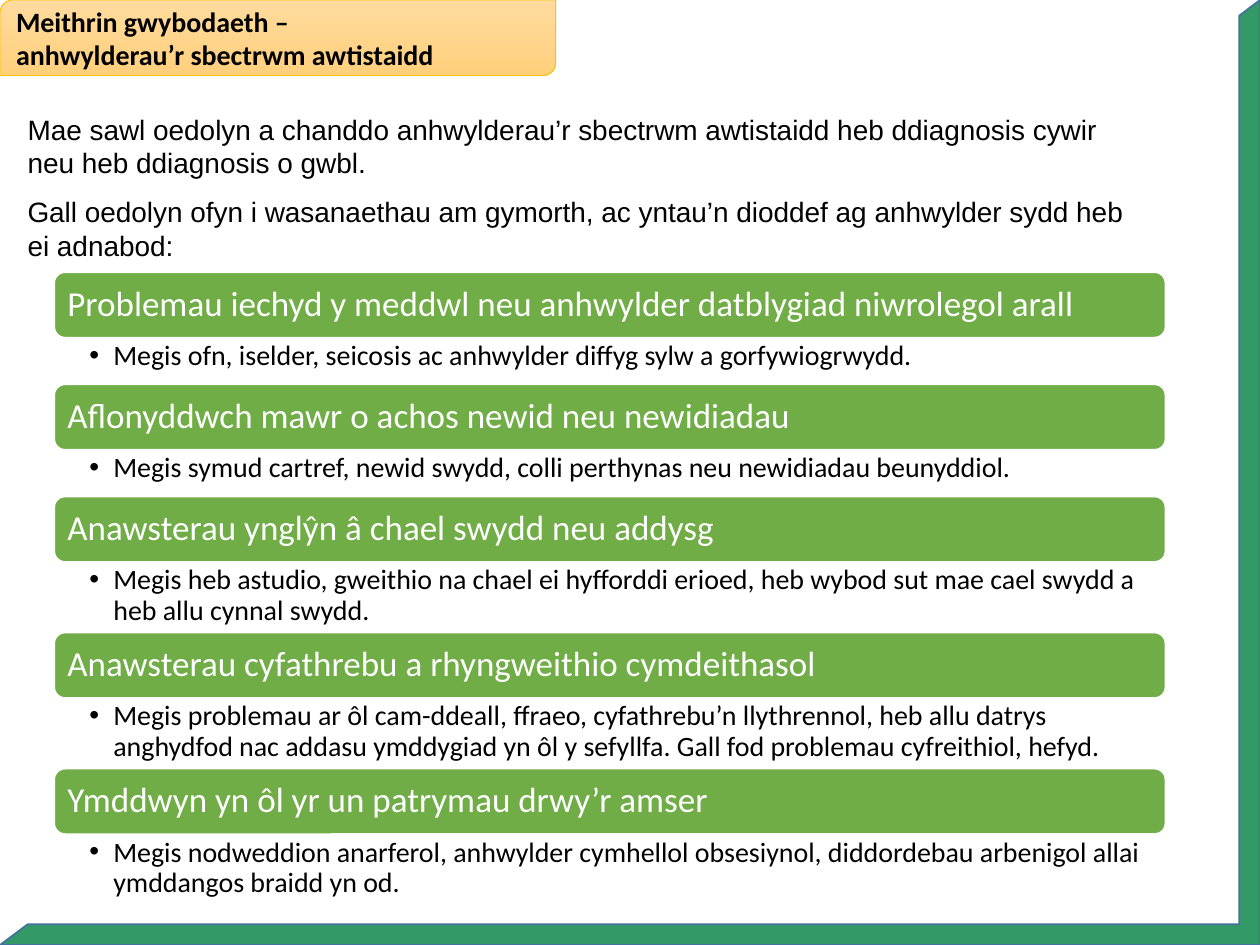
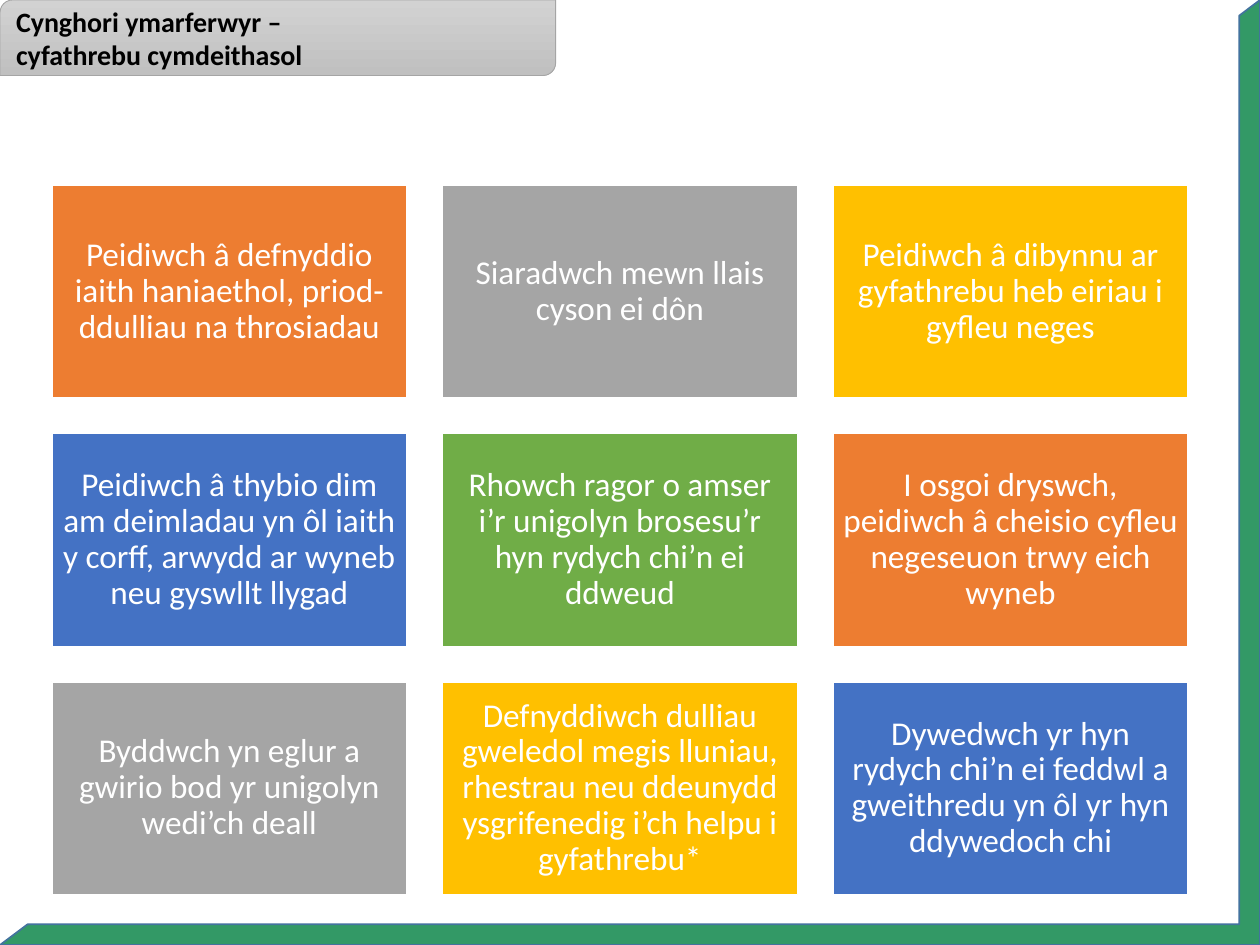
import itertools
from dataclasses import dataclass

import lxml.etree
import pptx
import pptx.dml.color
import pptx.enum.shapes
import pptx.enum.text
import pptx.oxml.ns
import pptx.util

HEADS = [
    ("Meithrin gwybodaeth –", "anhwylderau’r sbectrwm awtistaidd"),
    ("Cynghori ymarferwyr –", "cyfathrebu cymdeithasol"),
]
INTRO = [
    "Mae sawl oedolyn a chanddo anhwylderau’r sbectrwm awtistaidd heb ddiagnosis cywir neu heb ddiagnosis o gwbl.",
    "Gall oedolyn ofyn i wasanaethau am gymorth, ac yntau’n dioddef ag anhwylder sydd heb ei adnabod:",
]
SIGNS = [
    ("Problemau iechyd y meddwl neu anhwylder datblygiad niwrolegol arall",
     "Megis ofn, iselder, seicosis ac anhwylder diffyg sylw a gorfywiogrwydd.", 1),
    ("Aflonyddwch mawr o achos newid neu newidiadau",
     "Megis symud cartref, newid swydd, colli perthynas neu newidiadau beunyddiol.", 1),
    ("Anawsterau ynglŷn â chael swydd neu addysg",
     "Megis heb astudio, gweithio na chael ei hyfforddi erioed, heb wybod sut mae cael swydd a heb allu cynnal swydd.", 2),
    ("Anawsterau cyfathrebu a rhyngweithio cymdeithasol",
     "Megis problemau ar ôl cam-ddeall, ffraeo, cyfathrebu’n llythrennol, heb allu datrys anghydfod nac addasu ymddygiad yn ôl y sefyllfa. Gall fod problemau cyfreithiol, hefyd.", 2),
    ("Ymddwyn yn ôl yr un patrymau drwy’r amser",
     "Megis nodweddion anarferol, anhwylder cymhellol obsesiynol, diddordebau arbenigol allai ymddangos braidd yn od.", 2),
]
TIPS = [
    "Peidiwch â defnyddio iaith haniaethol, priod-ddulliau na throsiadau",
    "Siaradwch mewn llais cyson ei dôn",
    "Peidiwch â dibynnu ar gyfathrebu heb eiriau i gyfleu neges",
    "Peidiwch â thybio dim am deimladau yn ôl iaith y corff, arwydd ar wyneb neu gyswllt llygad",
    "Rhowch ragor o amser i’r unigolyn brosesu’r hyn rydych chi’n ei ddweud",
    "I osgoi dryswch, peidiwch â cheisio cyfleu negeseuon trwy eich wyneb",
    "Byddwch yn eglur a gwirio bod yr unigolyn wedi’ch deall",
    "Defnyddiwch dulliau gweledol megis lluniau, rhestrau neu ddeunydd ysgrifenedig i’ch helpu i gyfathrebu*",
    "Dywedwch yr hyn rydych chi’n ei feddwl a gweithredu yn ôl yr hyn ddywedoch chi",
]


@dataclass(frozen=True)
class Theme:
    font: str = "Calibri"
    plain: str = "Arial"
    ink: str = "000000"
    paper: str = "FFFFFF"
    frame: str = "339966"
    edge: str = "43739E"
    bar: str = "70AD47"
    cards: tuple = ("ED7D31", "A5A5A5", "FFC000", "4472C4", "70AD47")
    gold: tuple = ("FFDB9E", "FFD07C", "FFC000")
    grey: tuple = ("D2D2D2", "C0C0C0", "A5A5A5")
    body: int = 16
    title: int = 20
    card: int = 19


THEME = Theme()
WIDE, HIGH = 10, 7.5
INCH = pptx.util.Inches
KIND = pptx.enum.shapes.MSO_SHAPE
MID = pptx.enum.text.MSO_ANCHOR.MIDDLE
LEFT = pptx.enum.text.PP_ALIGN.LEFT
CENTRE = pptx.enum.text.PP_ALIGN.CENTER


def tint(code):
    return pptx.dml.color.RGBColor.from_string(code)


def draw(slide, kind, area, fill, line, width=1.0):
    shape = slide.shapes.add_shape(kind, *map(INCH, area))
    shape.shadow.inherit = False
    if isinstance(fill, str):
        shape.fill.solid()
        shape.fill.fore_color.rgb = tint(fill)
    else:
        shape.fill.gradient()
        shape.fill.gradient_angle = 270
        for stop, code in zip(shape.fill.gradient_stops, fill):
            stop.color.rgb = tint(code)
    shape.line.color.rgb = tint(line)
    shape.line.width = pptx.util.Pt(width)
    return shape


def add_dot(para):
    props = para._p.get_or_add_pPr()
    props.set("marL", str(INCH(0.19)))
    props.set("indent", str(-INCH(0.19)))
    ns = pptx.oxml.ns.qn
    lxml.etree.SubElement(props, ns("a:buFont")).set("typeface", "Arial")
    lxml.etree.SubElement(props, ns("a:buChar")).set("char", "•")


def write(shape, lines, size, ink, font=THEME.font, bold=False, align=LEFT,
          space=1.0, gap=0, pads=(0.1, 0.05, 0.1, 0.05), dot=False, mid=True):
    frame = shape.text_frame
    frame.word_wrap = True
    frame.vertical_anchor = MID if mid else pptx.enum.text.MSO_ANCHOR.TOP
    (frame.margin_left, frame.margin_top,
     frame.margin_right, frame.margin_bottom) = map(INCH, pads)
    for rank, line in enumerate(lines):
        para = frame.add_paragraph() if rank else frame.paragraphs[0]
        para.text = line
        if dot:
            add_dot(para)
        para.alignment = align
        para.line_spacing = space
        if rank and gap:
            para.space_before = pptx.util.Pt(gap)
        para.font.name = font
        para.font.size = pptx.util.Pt(size)
        para.font.bold = bold
        para.font.color.rgb = tint(ink)


def add_box(slide, area):
    return slide.shapes.add_textbox(*map(INCH, area))


def start(deck, head, tones):
    slide = deck.slides.add_slide(deck.slide_layouts[6])
    frame = draw(slide, KIND.HALF_FRAME, (0, 0, WIDE, HIGH), THEME.frame, THEME.edge)
    frame.rotation = 180
    frame.adjustments[0] = frame.adjustments[1] = 0.022
    tab = draw(slide, KIND.ROUND_2_DIAG_RECTANGLE, (0, 0, 4.41, 0.08 * HIGH),
               tones[:2], tones[2], 0.5)
    write(tab, head, THEME.body, THEME.ink, bold=True)
    return slide


def list_signs(slide):
    left, top, width, bar = 0.43, 2.16, 8.82, 0.52
    depth = {1: 0.37, 2: 0.56}
    for name, note, rows in SIGNS:
        shape = draw(slide, KIND.ROUNDED_RECTANGLE, (left, top, width, bar),
                     THEME.bar, THEME.paper)
        write(shape, [name], THEME.title, THEME.paper, space=0.9, pads=(0.08,) * 4)
        box = add_box(slide, (left, top + bar, width, depth[rows]))
        write(box, [note], THEME.body, THEME.ink, space=0.9,
              pads=(0.28, 0.03, 0.16, 0.03), dot=True, mid=False)
        top += bar + depth[rows]


def grid_tips(slide):
    left, top, width, height, gap = 0.41, 1.47, 2.82, 1.69, 0.28
    for rank, (tip, tone) in enumerate(zip(TIPS, itertools.cycle(THEME.cards))):
        row, col = divmod(rank, 3)
        area = (left + col * (width + gap), top + row * (height + gap), width, height)
        card = draw(slide, KIND.RECTANGLE, area, tone, THEME.paper)
        write(card, [tip], THEME.card, THEME.paper, align=CENTRE, space=0.9,
              pads=(0.08,) * 4)


def main():
    deck = pptx.Presentation()
    deck.slide_width, deck.slide_height = INCH(WIDE), INCH(HIGH)
    first = start(deck, HEADS[0], THEME.gold)
    list_signs(first)
    write(add_box(first, (0.12, 0.84, 8.98, 1.31)), INTRO, THEME.body, THEME.ink,
          font=THEME.plain, gap=9, mid=False)
    grid_tips(start(deck, HEADS[1], THEME.grey))
    deck.save("out.pptx")


if __name__ == "__main__":
    main()
